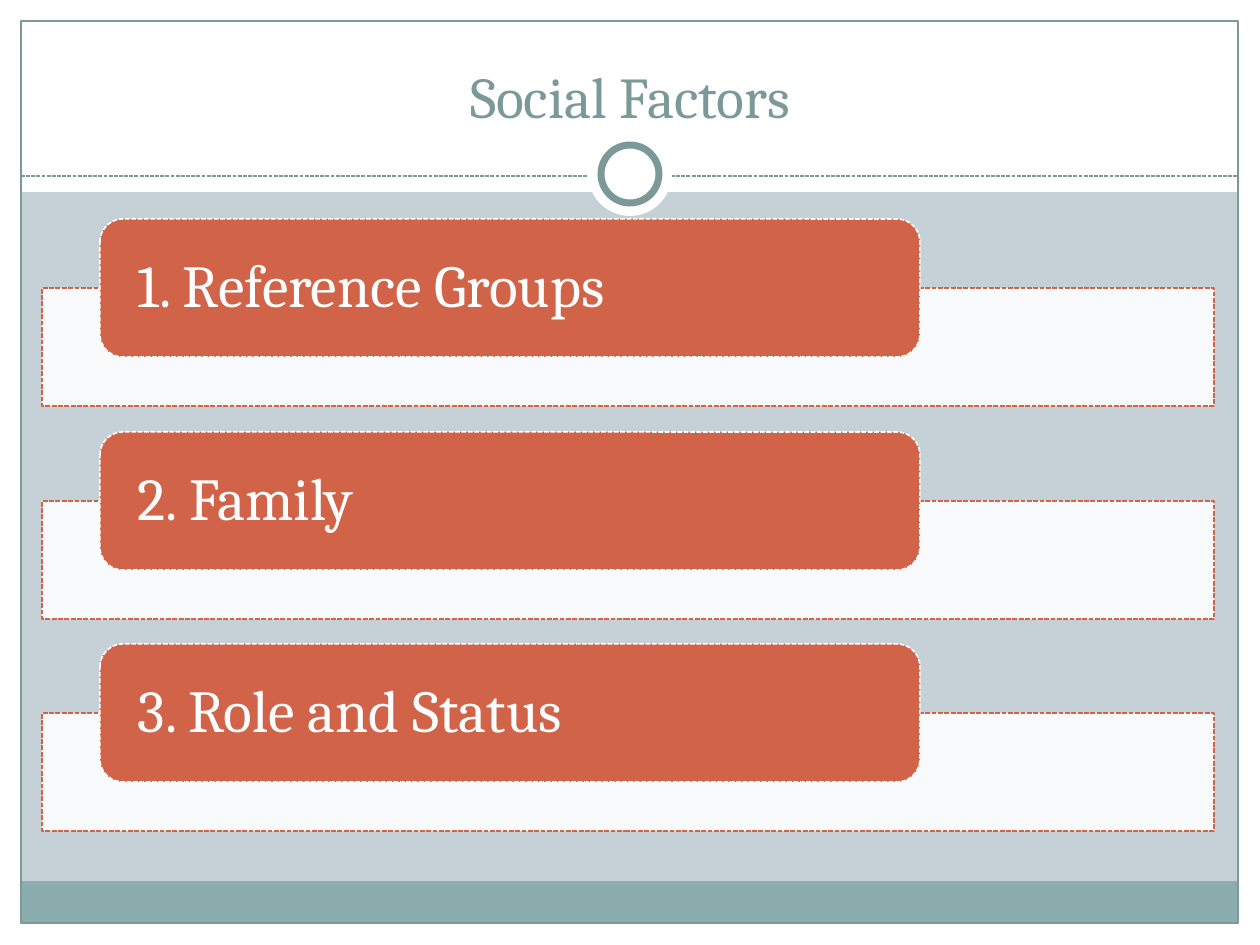
from dataclasses import dataclass
from typing import Optional

from lxml.etree import SubElement
from pptx import Presentation
from pptx.dml.color import RGBColor
from pptx.enum.dml import MSO_LINE
from pptx.enum.shapes import MSO_CONNECTOR, MSO_SHAPE
from pptx.enum.text import MSO_ANCHOR, PP_ALIGN
from pptx.oxml.ns import qn
from pptx.util import Emu, Pt

PX_PER_INCH = 126


@dataclass(frozen=True)
class Theme:
    background: str = "C5D1D7"
    white: str = "FFFFFF"
    sage: str = "7C999A"
    footer: str = "8CADAE"
    accent: str = "D16349"
    font: str = "Cambria"
    title_size: int = 33
    card_size: int = 34
    frame_line: float = 0.75
    card_line: float = 0.9
    ring_line: float = 4


@dataclass(frozen=True)
class Box:
    left: int
    top: int
    width: int
    height: int
    fill: Optional[str] = None
    line: Optional[str] = None
    weight: float = 0
    dashed: bool = False
    opacity: int = 100
    kind: MSO_SHAPE = MSO_SHAPE.RECTANGLE


THEME = Theme()

FRAME = [
    Box(0, 924, 1260, 21, THEME.white),
    Box(0, 0, 1260, 192, THEME.white),
    Box(0, 0, 21, 945, THEME.white),
    Box(1239, 0, 21, 945, THEME.white),
    Box(21, 881, 1217, 43, THEME.footer),
    Box(21, 21, 1217, 902, line=THEME.sage, weight=THEME.frame_line),
]
RING = [
    Box(588, 132, 84, 84, THEME.white, kind=MSO_SHAPE.OVAL),
    Box(601, 145, 58, 58, THEME.white, THEME.sage, THEME.ring_line, kind=MSO_SHAPE.OVAL),
]
FACTORS = ["1. Reference Groups", "2. Family", "3. Role and Status"]
FIRST_TOP, LAST_TOP = 219, 644
PANEL_DROP = 69


def px(n: int) -> Emu:
    return Emu(round(n * 914400 / PX_PER_INCH))


def rgb(color: str) -> RGBColor:
    return RGBColor.from_string(color)


def add_box(slide, box: Box):
    sp = slide.shapes.add_shape(
        box.kind, px(box.left), px(box.top), px(box.width), px(box.height)
    )
    sp.shadow.inherit = False
    if box.fill:
        sp.fill.solid()
        sp.fill.fore_color.rgb = rgb(box.fill)
        if box.opacity < 100:
            color = sp._element.spPr.find(qn("a:solidFill"))[0]
            SubElement(color, qn("a:alpha"), val=str(box.opacity * 1000))
    else:
        sp.fill.background()
    if box.line:
        sp.line.color.rgb = rgb(box.line)
        sp.line.width = Pt(box.weight)
        if box.dashed:
            sp.line.dash_style = MSO_LINE.SQUARE_DOT
    else:
        sp.line.fill.background()
    return sp


def add_divider(slide) -> None:
    line = slide.shapes.add_connector(
        MSO_CONNECTOR.STRAIGHT, px(21), px(176), px(1238), px(176)
    )
    line.line.color.rgb = rgb(THEME.sage)
    line.line.width = Pt(THEME.frame_line)
    line.line.dash_style = MSO_LINE.SQUARE_DOT
    SubElement(line._element.spPr, qn("a:effectLst"))


def set_text(sp, text: str, size: int, color: str, align: PP_ALIGN, anchor: MSO_ANCHOR):
    tf = sp.text_frame
    tf.word_wrap = True
    tf.vertical_anchor = anchor
    p = tf.paragraphs[0]
    p.text = text
    p.alignment = align
    r = p.runs[0]
    r.font.name = THEME.font
    r.font.size = Pt(size)
    r.font.color.rgb = rgb(color)
    return tf


def add_title(slide, text: str) -> None:
    sp = slide.shapes.add_textbox(px(42), px(32), px(1176), px(104))
    set_text(sp, text, THEME.title_size, THEME.sage, PP_ALIGN.CENTER, MSO_ANCHOR.BOTTOM)


def add_factor(slide, text: str, top: int) -> None:
    add_box(slide, Box(42, top + PANEL_DROP, 1172, 118, THEME.white, THEME.accent,
                       THEME.card_line, dashed=True, opacity=90))
    card = add_box(slide, Box(100, top, 820, 138, THEME.accent, THEME.white,
                              THEME.card_line, dashed=True,
                              kind=MSO_SHAPE.ROUNDED_RECTANGLE))
    tf = set_text(card, text, THEME.card_size, THEME.white, PP_ALIGN.LEFT, MSO_ANCHOR.MIDDLE)
    tf.margin_left = tf.margin_right = px(31)
    tf.margin_top = tf.margin_bottom = 0
    tf.paragraphs[0].line_spacing = 0.9


def main() -> None:
    prs = Presentation()
    prs.slide_width, prs.slide_height = px(1260), px(945)
    s = prs.slides.add_slide(prs.slide_layouts[6])
    s.background.fill.solid()
    s.background.fill.fore_color.rgb = rgb(THEME.background)

    for box in FRAME:
        add_box(s, box)
    add_divider(s)
    for box in RING:
        add_box(s, box)
    add_title(s, "Social Factors")

    pitch = (LAST_TOP - FIRST_TOP) / (len(FACTORS) - 1)
    for i, text in enumerate(FACTORS):
        add_factor(s, text, round(FIRST_TOP + i * pitch))

    prs.save("out.pptx")


if __name__ == "__main__":
    main()
